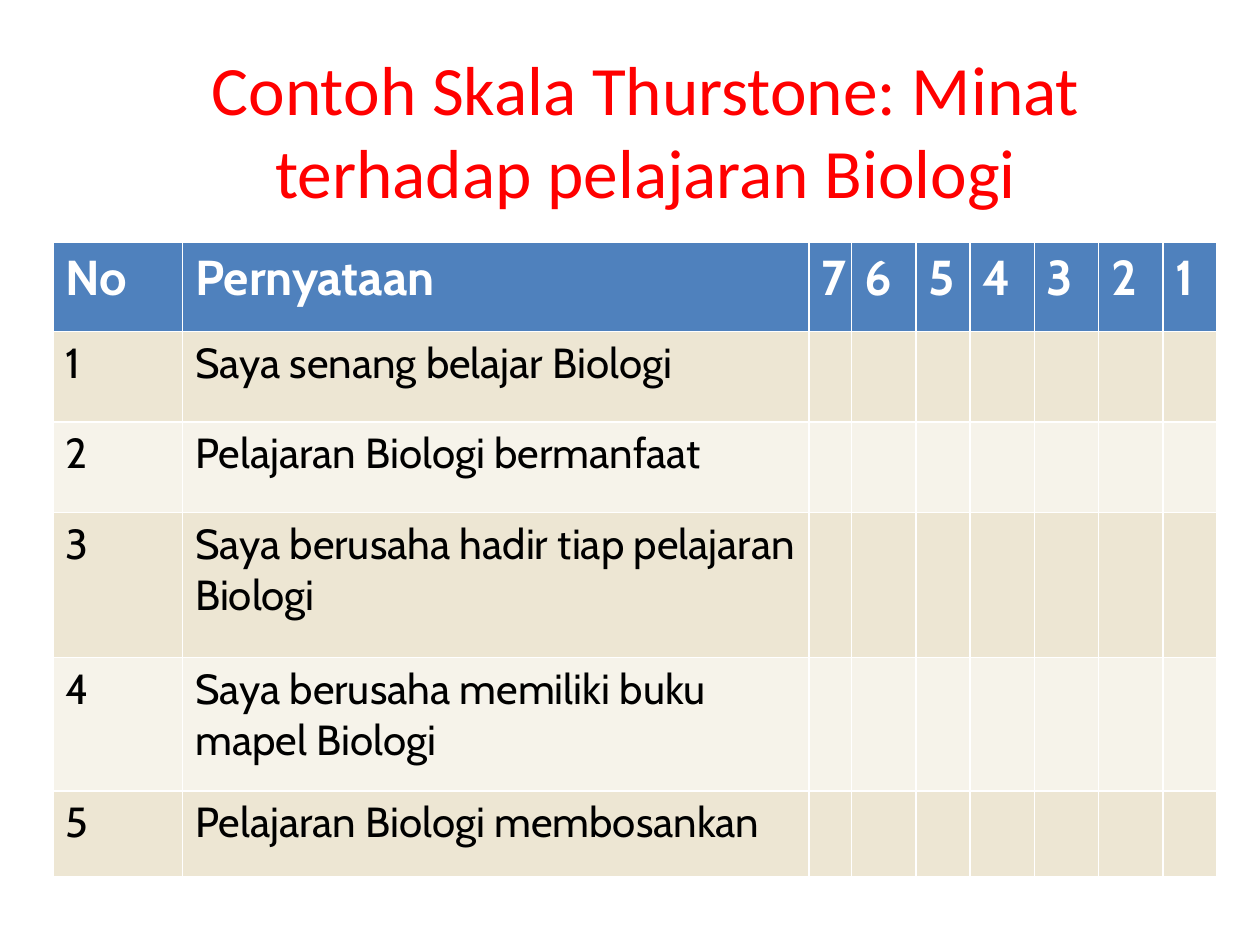
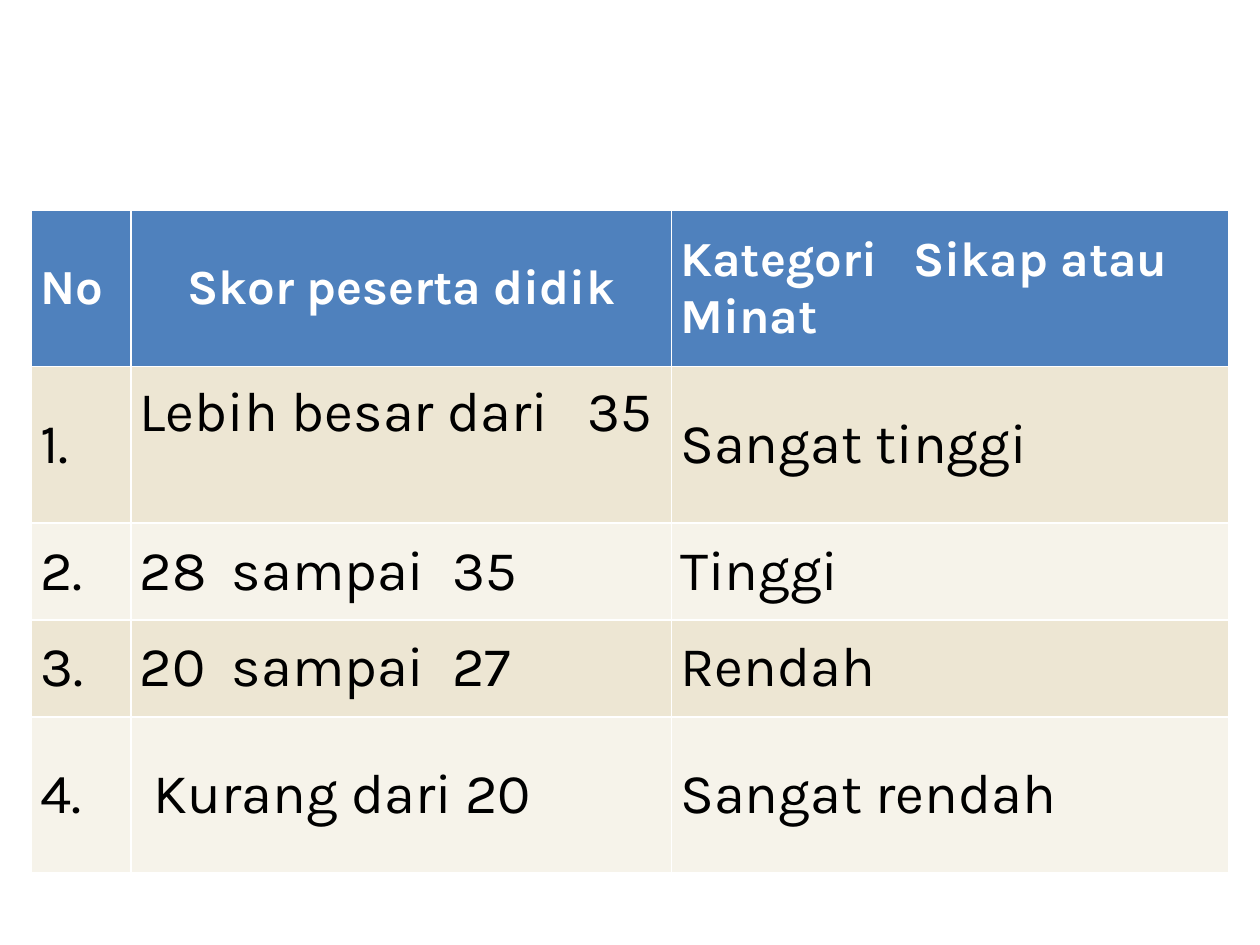
from lxml.etree import SubElement
from pptx import Presentation
from pptx.dml.color import RGBColor
from pptx.enum.text import MSO_ANCHOR, MSO_AUTO_SIZE, PP_ALIGN
from pptx.oxml import parse_xml
from pptx.oxml.ns import nsdecls, qn
from pptx.util import Inches, Pt

COLORS = {"title": "FF0000", "head": "4F81BD", "odd": "EDE6D3",
          "even": "F6F3EA", "light": "FFFFFF", "dark": "000000"}

TITLE = "Contoh Skala Thurstone: Minat terhadap pelajaran Biologi"
CLAIMS = [
    "Saya senang belajar Biologi",
    "Pelajaran Biologi bermanfaat",
    "Saya berusaha hadir tiap pelajaran Biologi",
    "Saya berusaha memiliki buku mapel Biologi",
    "Pelajaran Biologi membosankan",
]
SCALE = {
    "rows": [["No", "Pernyataan", *"7654321"]]
            + [[str(n), claim] for n, claim in enumerate(CLAIMS, 1)],
    "at": (0.42, 1.92),
    "cols": [1.03, 4.97, 0.34, 0.51, 0.43, 0.51, 0.51, 0.51, 0.43],
    "heights": [0.71, 0.72, 0.72, 1.15, 1.06, 0.68],
    "font": "Cabin", "size": 24, "cell": {},
}

LEVELS = [
    ("Lebih besar dari\t35", "Sangat tinggi"),
    ("28\tsampai\t35", "Tinggi"),
    ("20\tsampai\t27", "Rendah"),
    ("Kurang dari 20", "Sangat rendah"),
]
SCORES = {
    "rows": [["No", "Skor peserta didik", "Kategori\tSikap atau Minat"]]
            + [[f"{n}.", *level] for n, level in enumerate(LEVELS, 1)],
    "at": (0.25, 1.67),
    "cols": [0.79, 4.29, 4.42],
    "heights": [1.24, 1.24, 0.77, 0.77, 1.24],
    "font": "Karla", "size": 32,
    "cell": {"vertical_anchor": MSO_ANCHOR.MIDDLE,
             "margin_left": Inches(0.07), "margin_right": Inches(0.07),
             "margin_top": 0, "margin_bottom": 0},
}
# Tab stops by (row, column), in inches from the cell's text edge
TABS = {(0, 2): [1.85], (1, 1): [3.55],
        (2, 1): [0.73, 2.48], (3, 1): [0.73, 2.48]}


def color(name):
    return RGBColor.from_string(COLORS[name])


def apply(target, values):
    for name, value in values.items():
        setattr(target, name, value)


def style(par, tint, **values):
    apply(par.font, values)
    par.font.color.rgb = color(tint)


def border(cell):
    props = cell._tc.get_or_add_tcPr()
    for pos, side in enumerate("LRTB"):
        props.insert(pos, parse_xml(
            f'<a:ln{side} {nsdecls("a")} w="{Pt(1)}"><a:solidFill>'
            f'<a:srgbClr val="{COLORS["light"]}"/></a:solidFill></a:ln{side}>'))


def set_tabs(par, stops):
    tabs = SubElement(par._p.get_or_add_pPr(), qn("a:tabLst"))
    for stop in stops:
        SubElement(tabs, qn("a:tab"), pos=str(Inches(stop)), algn="l")


def add_grid(slide, data, tabs):
    rows, cols, heights = data["rows"], data["cols"], data["heights"]
    box = map(Inches, (*data["at"], sum(cols), sum(heights)))
    table = slide.shapes.add_table(len(rows), len(cols), *box).table
    for col, width in zip(table.columns, cols):
        col.width = Inches(width)
    for r, (row, height) in enumerate(zip(table.rows, heights)):
        row.height = Inches(height)
        head = r == 0
        for cell in row.cells:
            cell.fill.solid()
            cell.fill.fore_color.rgb = color(
                "head" if head else ("even", "odd")[r % 2])
            border(cell)
            apply(cell, data["cell"])
        for c, text in enumerate(rows[r]):
            par = table.cell(r, c).text_frame.paragraphs[0]
            if (r, c) in tabs:
                set_tabs(par, tabs[r, c])
            par.add_run().text = text
            run = par.runs[0]
            style(run, "light" if head else "dark", name=data["font"],
                  size=Pt(28 if head else data["size"]), bold=head)
    return table


def add_title(slide, text):
    title = slide.shapes.title
    apply(title, {"left": Inches(0.5), "top": Inches(0.3),
                  "width": Inches(9.25), "height": Inches(1.45)})
    frame = title.text_frame
    frame.text = text
    apply(frame, {"word_wrap": True, "auto_size": MSO_AUTO_SIZE.NONE,
                  "vertical_anchor": MSO_ANCHOR.MIDDLE})
    par = frame.paragraphs[0]
    par.alignment = PP_ALIGN.CENTER
    style(par.runs[0], "title", name="Calibri", size=Pt(39.6))


def main():
    deck = Presentation()
    apply(deck, {"slide_width": Inches(10), "slide_height": Inches(7.5)})

    slide = deck.slides.add_slide(deck.slide_layouts[5])
    add_title(slide, TITLE)
    add_grid(slide, SCALE, {})

    slide = deck.slides.add_slide(deck.slide_layouts[6])
    table = add_grid(slide, SCORES, TABS)
    table.cell(0, 1).text_frame.paragraphs[0].alignment = PP_ALIGN.CENTER
    table.cell(1, 1).margin_bottom = Inches(0.5)
    table.cell(4, 1).margin_left = Inches(0.18)

    deck.save("out.pptx")


if __name__ == "__main__":
    main()
